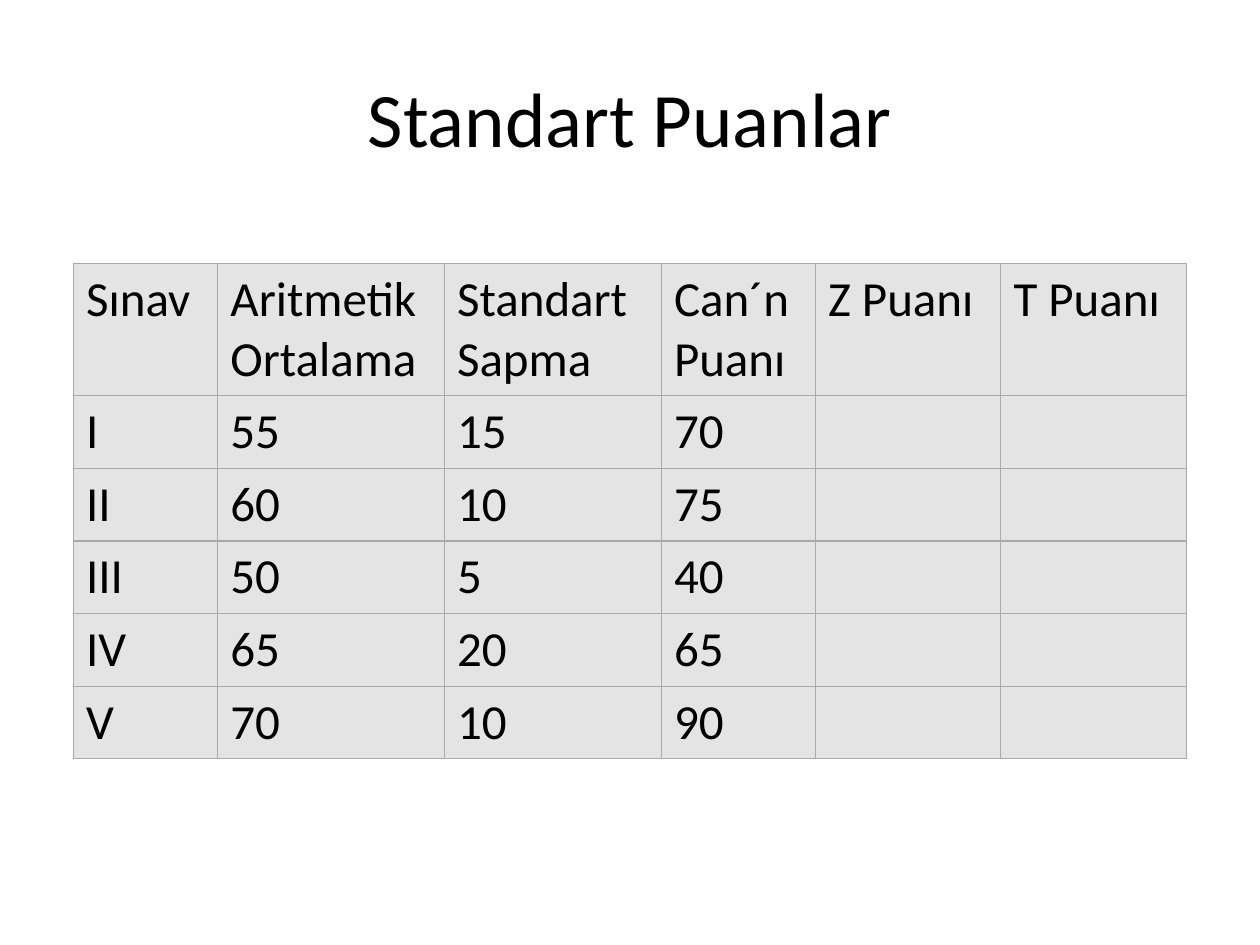
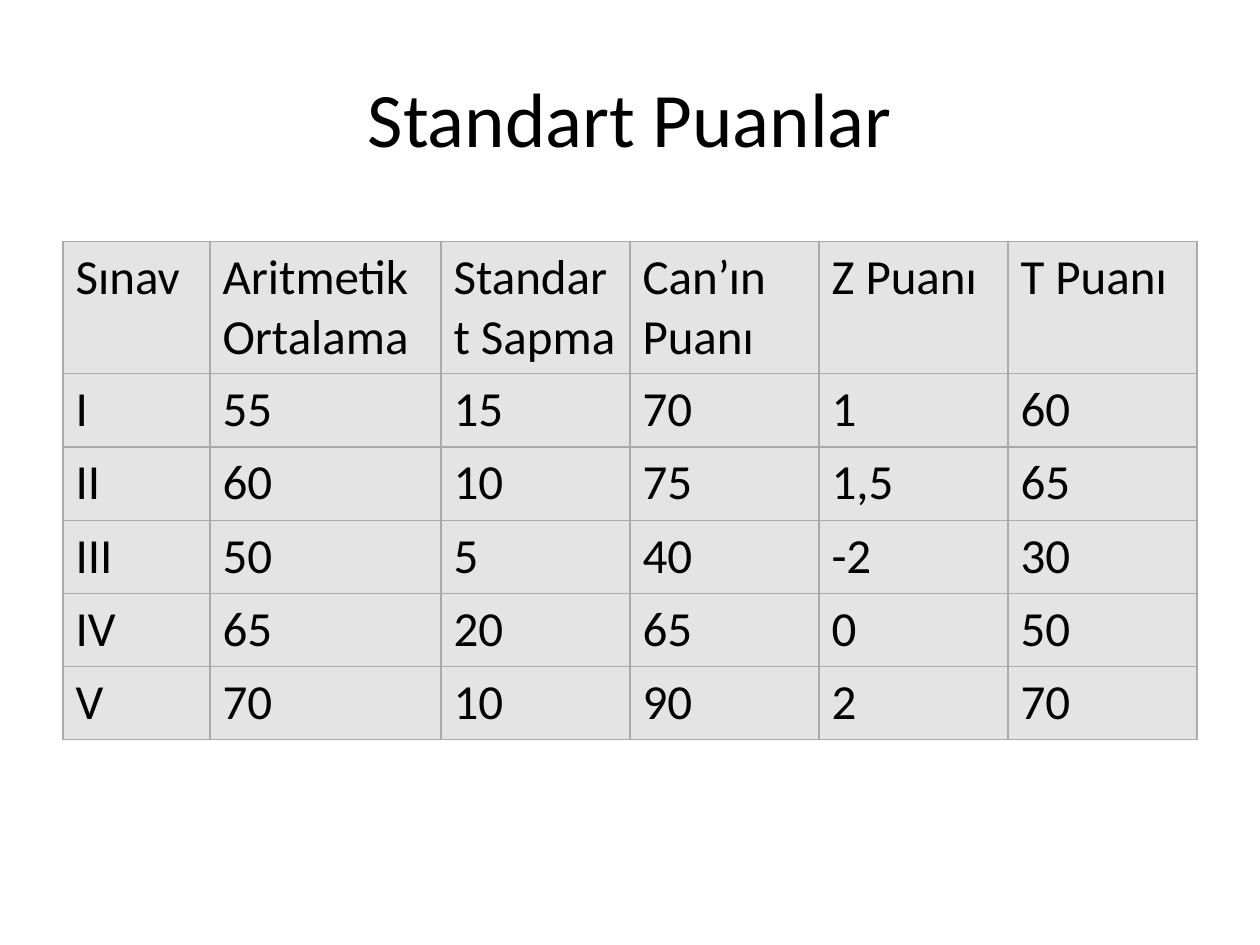
from lxml.etree import SubElement
from pptx import Presentation
from pptx.dml.color import RGBColor
from pptx.enum.text import MSO_ANCHOR, PP_ALIGN
from pptx.oxml.ns import qn
from pptx.util import Pt

TITLE = "Standart Puanlar"
HEADERS = ["Sınav", "Aritmetik Ortalama", "Standart Sapma", "{} Puanı", "Z Puanı", "T Puanı"]
EXAMS = [
    ("I", "55", "15", "70", "1", "60"),
    ("II", "60", "10", "75", "1,5", "65"),
    ("III", "50", "5", "40", "-2", "30"),
    ("IV", "65", "20", "65", "0", "50"),
    ("V", "70", "10", "90", "2", "70"),
]
GIVEN_COLUMNS = 4  # the Z and T scores are the exercise
SLIDES = [
    dict(student="Can´n", solved=False, left=42, top=150.5, row_height=41.5,
         widths=[82.5, 129.5, 124, 88, 106, 106]),
    dict(student="Can’ın", solved=True, left=36, top=138, row_height=41.8,
         widths=[84, 132, 108, 108, 108, 108]),
]

FONT = "Calibri"
TITLE_SIZE, CELL_SIZE = Pt(44), Pt(28)
HEADER_HEIGHT = 75.6
BORDER_WIDTH = Pt(0.75)
TEXT = RGBColor(0x00, 0x00, 0x00)
CELL_FILL = RGBColor(0xE4, 0xE4, 0xE4)
BORDER = RGBColor(0xAA, 0xAA, 0xAA)


def format_paragraph(p, size, align):
    p.alignment = align
    p.font.name, p.font.size, p.font.color.rgb = FONT, size, TEXT


def add_title(slide):
    sp = slide.shapes.title
    sp.left, sp.top, sp.width, sp.height = Pt(36), Pt(21.6), Pt(648), Pt(90)
    tf = sp.text_frame
    tf.text = TITLE
    tf.vertical_anchor = MSO_ANCHOR.MIDDLE
    format_paragraph(tf.paragraphs[0], TITLE_SIZE, PP_ALIGN.CENTER)


def add_borders(cell):
    tc_pr = cell._tc.get_or_add_tcPr()
    for side in ("a:lnL", "a:lnR", "a:lnT", "a:lnB"):
        line = SubElement(tc_pr, qn(side), w=str(BORDER_WIDTH))
        fill = SubElement(line, qn("a:solidFill"))
        SubElement(fill, qn("a:srgbClr"), val=str(BORDER))


def format_cell(cell, text):
    add_borders(cell)
    cell.fill.solid()
    cell.fill.fore_color.rgb = CELL_FILL
    cell.text = text
    format_paragraph(cell.text_frame.paragraphs[0], CELL_SIZE, PP_ALIGN.LEFT)


def add_score_table(slide, student, solved, left, top, row_height, widths):
    rows = [[h.format(student) for h in HEADERS]]
    for exam in EXAMS:
        shown = len(HEADERS) if solved else GIVEN_COLUMNS
        rows.append([v if i < shown else "" for i, v in enumerate(exam)])
    heights = [HEADER_HEIGHT] + [row_height] * len(EXAMS)
    table = slide.shapes.add_table(len(rows), len(widths), Pt(left), Pt(top),
                                   Pt(sum(widths)), Pt(sum(heights))).table
    table.first_row = table.horz_banding = False
    for column, width in zip(table.columns, widths):
        column.width = Pt(width)
    for row, height, values in zip(table.rows, heights, rows):
        row.height = Pt(height)
        for cell, value in zip(row.cells, values):
            format_cell(cell, value)


def main():
    prs = Presentation()
    prs.slide_width, prs.slide_height = Pt(720), Pt(540)
    for content in SLIDES:
        slide = prs.slides.add_slide(prs.slide_layouts.get_by_name("Title Only"))
        add_title(slide)
        add_score_table(slide, **content)
    prs.save("out.pptx")


if __name__ == "__main__":
    main()
